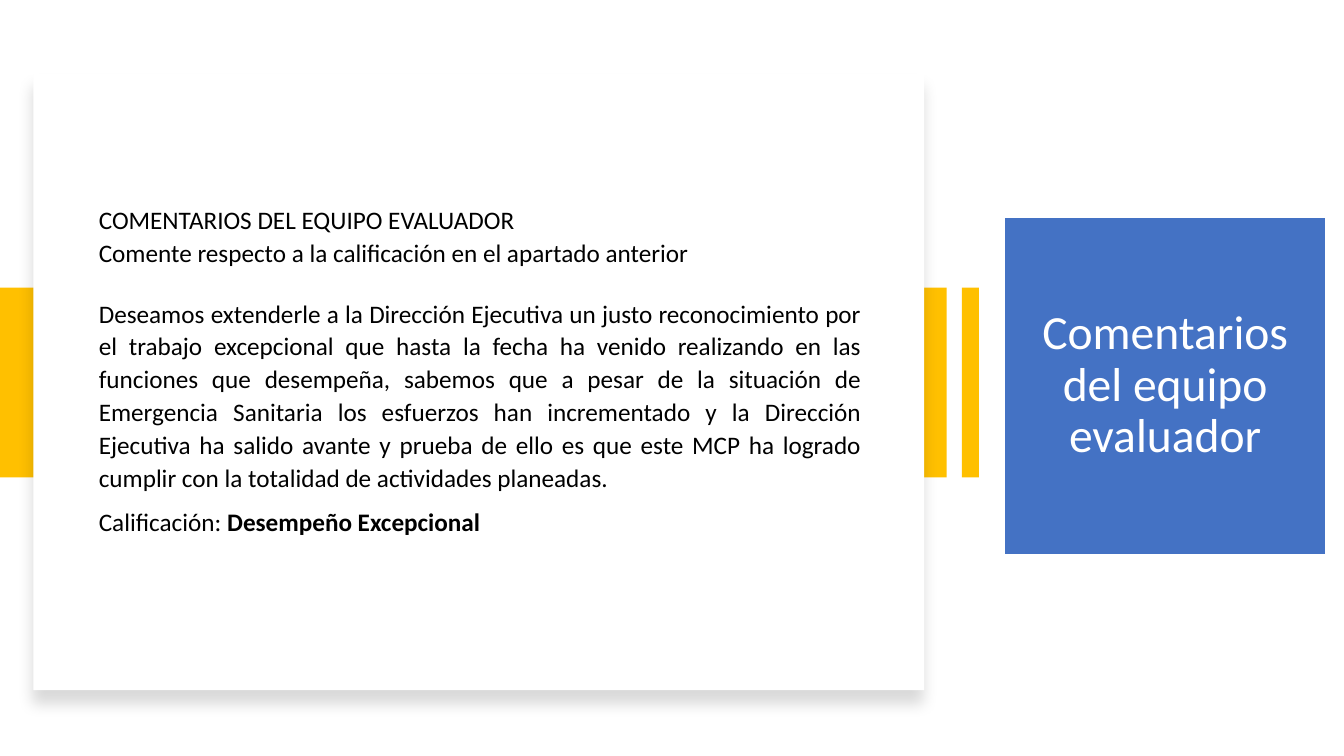
from dataclasses import dataclass

from lxml.etree import SubElement
from pptx import Presentation
from pptx.dml.color import RGBColor
from pptx.enum.shapes import MSO_SHAPE as Preset
from pptx.enum.text import MSO_ANCHOR as Anchor, PP_ALIGN as Align
from pptx.oxml import parse_xml
from pptx.oxml.ns import qn
from pptx.util import Cm, Pt


@dataclass(frozen=True)
class Theme:
    font: str = "Calibri"
    blue: RGBColor = RGBColor(0x44, 0x72, 0xC4)
    amber: RGBColor = RGBColor(0xFF, 0xC0, 0x00)
    white: RGBColor = RGBColor(0xFF, 0xFF, 0xFF)
    black: RGBColor = RGBColor(0x00, 0x00, 0x00)
    title_size: int = Pt(34)
    body_size: int = Pt(18)


theme = Theme()
deck = Presentation()
deck.slide_width, deck.slide_height = Cm(33.87), Cm(19.05)
page = deck.slides.add_slide(deck.slide_layouts[6])


def add_box(left, top, width, height, color):
    box = page.shapes.add_shape(Preset.RECTANGLE, Cm(left), Cm(top), Cm(width), Cm(height))
    box.shadow.inherit = False
    box.fill.solid()
    box.fill.fore_color.rgb = color
    box.line.fill.background()
    return box


def style_span(span, size, color):
    span.font.name = theme.font
    span.font.size = size
    span.font.color.rgb = color


# Title block
title = add_box(25.3, 5.46, 8.13, 8.53, theme.blue)
title.line.color.rgb = theme.white
title.line.width = Pt(1.5)
title.text_frame.word_wrap = True
title.text_frame.vertical_anchor = Anchor.MIDDLE
title.text_frame.text = "Comentarios del equipo evaluador"
heading = title.text_frame.paragraphs[0]
heading.alignment = Align.CENTER
heading.line_spacing = 0.9
style_span(heading.runs[0], theme.title_size, theme.white)

# Amber bars, with the white card over the wide one
band_top, band_height = 7.25, 4.78
add_box(0, band_top, 23.86, band_height, theme.amber)
card = add_box(0.84, 1.85, 22.45, 15.54, theme.white)
add_box(24.24, band_top, 0.43, band_height, theme.amber)

# Soft shadow under the card
effects = card._element.spPr.find(qn("a:effectLst"))
shadow = SubElement(effects, qn("a:outerShdw"), blurRad=str(Pt(11)), dist=str(Pt(10)),
                    dir="5400000", algn="t", rotWithShape="0")
tint = SubElement(shadow, qn("a:srgbClr"), val=str(theme.black))
SubElement(tint, qn("a:alpha"), val="15000")

# Comments table: each paragraph is a list of (text, bold) spans
header = [
    [("COMENTARIOS DEL EQUIPO EVALUADOR", False)],
    [("Comente respecto a la calificación en el apartado anterior", False)],
]
comments = [
    [("Deseamos extenderle a la Dirección Ejecutiva un justo reconocimiento por el trabajo "
      "excepcional que hasta la fecha ha venido realizando en las funciones que desempeña, "
      "sabemos que a pesar de la situación de Emergencia Sanitaria los esfuerzos han "
      "incrementado y la Dirección Ejecutiva ha salido avante y prueba de ello es que este "
      "MCP ha logrado cumplir con la totalidad de actividades planeadas.", False)],
    [("Calificación: ", False), ("Desempeño Excepcional", True)],
]
# Content, row height, bottom margin, alignment, space after
rows = [
    (header, 2.01, 0, Align.LEFT, 0),
    (comments, 8.23, 1.1, Align.JUSTIFY, 8),
]
table = page.shapes.add_table(len(rows), 1, Cm(2.31), Cm(4.95), Cm(19.58), Cm(10.24)).table
table.first_row = table.horz_banding = False

for index, (content, height, bottom, alignment, gap) in enumerate(rows):
    table.rows[index].height = Cm(height)
    cell = table.cell(index, 0)
    cell.vertical_anchor = Anchor.MIDDLE
    cell.margin_left = cell.margin_right = Cm(0.18)
    cell.margin_top, cell.margin_bottom = 0, Cm(bottom)
    cell.fill.background()

    # White borders go ahead of the fill
    properties = cell._tc.get_or_add_tcPr()
    for position, side in enumerate(("lnL", "lnR", "lnT", "lnB")):
        properties.insert(position, parse_xml(
            f'<a:{side} xmlns:a="http://schemas.openxmlformats.org/drawingml/2006/main" '
            f'w="{Pt(1)}"><a:solidFill><a:srgbClr val="{theme.white}"/></a:solidFill></a:{side}>'))

    frame = cell.text_frame
    frame.text = "\n".join("" for _ in content)
    for para, spans in zip(frame.paragraphs, content):
        para.alignment = alignment
        para.line_spacing = 1.07
        para.space_after = Pt(gap)
        for text, bold in spans:
            span = para.add_run()
            span.text = text
            span.font.bold = bold
            style_span(span, theme.body_size, theme.black)

deck.save("out.pptx")
